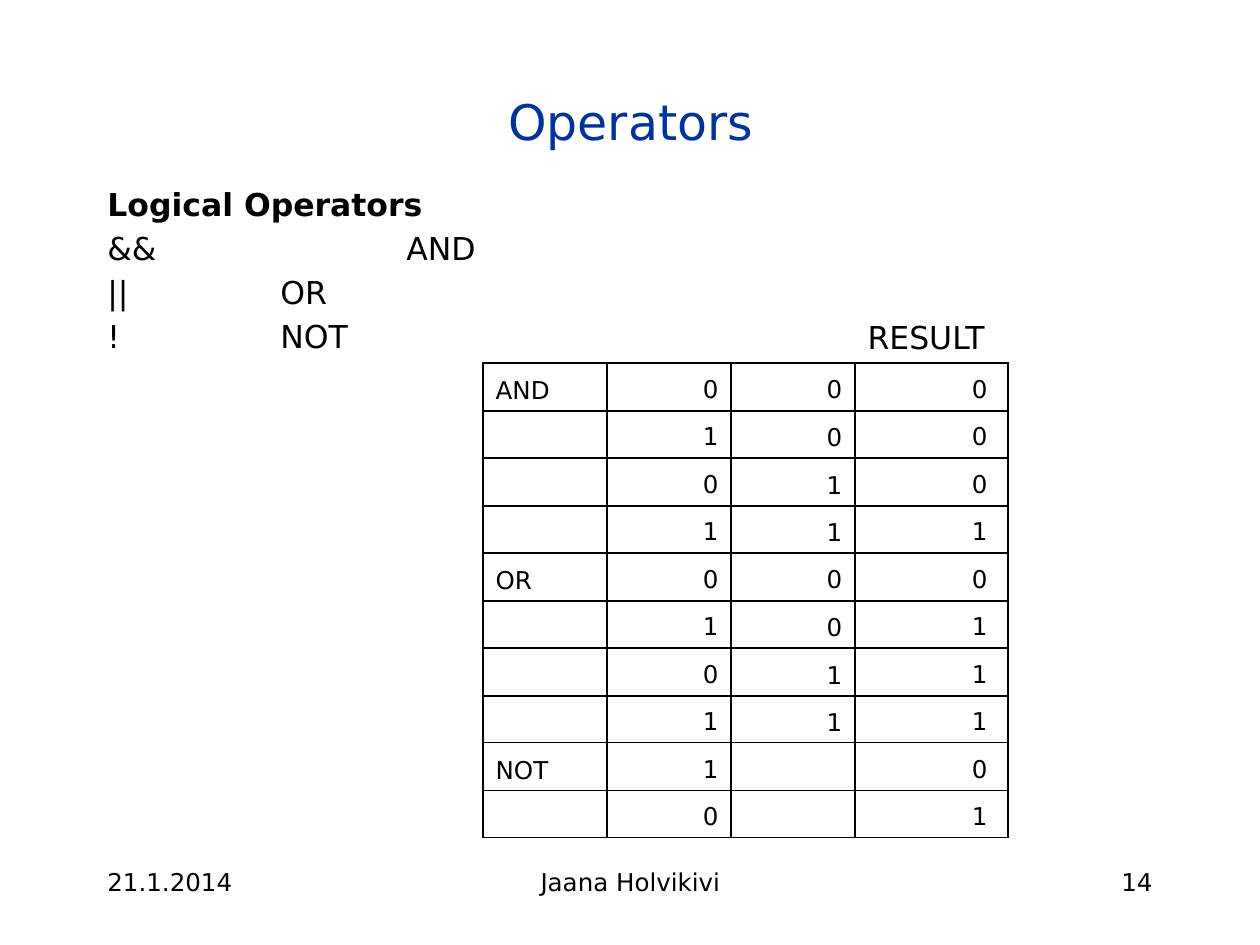
from lxml import etree
from pptx import Presentation
from pptx import util as u
from pptx.dml.color import RGBColor
from pptx.enum import text
from pptx.oxml.ns import qn

SCALE = 914400 / 126
LEFT, CENTER, RIGHT = text.PP_ALIGN.LEFT, text.PP_ALIGN.CENTER, text.PP_ALIGN.RIGHT


def px(n):
    return u.Emu(round(n * SCALE))


def rgb(value):
    return RGBColor.from_string(value)


class Deck:
    font = "DejaVu Sans"
    ink = "000000"
    accent = "003399"

    def __init__(self, width, height):
        self.prs = Presentation()
        self.prs.slide_width, self.prs.slide_height = px(width), px(height)
        self.s = self.prs.slides.add_slide(self.prs.slide_layouts[6])

    def style(self, p, size, align=LEFT, color=ink, bold=False):
        p.alignment = align
        for r in p.runs:
            r.font.name, r.font.size, r.font.bold = self.font, u.Pt(size), bold
            r.font.color.rgb = rgb(color)

    def hang(self, p, spaced):
        pPr = p._p.get_or_add_pPr()
        pPr.set("marL", str(px(47)))
        pPr.set("indent", str(-px(47)))
        pPr.set("defTabSz", str(px(126)))
        if spaced:
            before = etree.SubElement(pPr, qn("a:spcBef"))
            etree.SubElement(before, qn("a:spcPct")).set("val", "20000")

    def box(self, words, x, y, w, h, size=14, align=LEFT, color=ink,
            anchor=text.MSO_ANCHOR.TOP):
        tf = self.s.shapes.add_textbox(px(x), px(y), px(w), px(h)).text_frame
        tf.word_wrap = True
        tf.vertical_anchor = anchor
        tf.text = words
        for p in tf.paragraphs:
            self.style(p, size, align, color)
        return tf

    def body(self, lines, x, y, w, h, size):
        tf = self.box("\n".join(lines), x, y, w, h, size)
        for i, p in enumerate(tf.paragraphs):
            self.style(p, size, bold=i == 0)
            self.hang(p, True)

    def borders(self, cell, sides):
        tcPr = cell._tc.get_or_add_tcPr()
        for side in "LRTB":
            ln = etree.SubElement(tcPr, qn("a:ln" + side), w=str(u.Pt(1)))
            if side in sides:
                fill = etree.SubElement(ln, qn("a:solidFill"))
                etree.SubElement(fill, qn("a:srgbClr"), val=self.ink)
            else:
                etree.SubElement(ln, qn("a:noFill"))

    def cell(self, cell, words, size, align, spaced, sides):
        self.borders(cell, sides)
        cell.fill.background()
        cell.vertical_anchor = text.MSO_ANCHOR.BOTTOM
        if not words:
            cell.margin_top = cell.margin_bottom = 0
            return
        cell.text_frame.text = words
        p = cell.text_frame.paragraphs[0]
        self.style(p, size, align)
        if spaced:
            p.line_spacing = 0.9
        self.hang(p, spaced)

    def truth_table(self, header, rows, x, y, widths, heights):
        table = self.s.shapes.add_table(
            len(rows) + 1, len(widths), px(x), px(y),
            px(sum(widths)), px(sum(heights))).table
        table.first_row = table.horz_banding = False
        for column, w in zip(table.columns, widths):
            column.width = px(w)
        for row, h in zip(table.rows, heights):
            row.height = px(h)
        for c, words in enumerate(header):
            self.cell(table.cell(0, c), words, 18, LEFT, False, "B")
        for r, values in enumerate(rows, 1):
            for c, words in enumerate(values):
                spaced = c == 0 or (c == 2 and not values[0])
                align = RIGHT if c else LEFT
                self.cell(table.cell(r, c), words, 14, align, spaced, "LRTB")


def main():
    deck = Deck(1260, 945)
    deck.box("21.1.2014", 95, 861, 262, 63)
    deck.box("Jaana Holvikivi", 431, 861, 399, 63, align=CENTER)
    deck.box("14", 903, 861, 262, 63, align=RIGHT)
    deck.box("Operators", 95, 42, 1071, 158, 28, CENTER, deck.accent,
             text.MSO_ANCHOR.MIDDLE)
    deck.body(["Logical Operators", "&&\t\tAND", "||\t\tOR", "!\t\tNOT"],
              95, 179, 525, 252, 18)

    pairs = [("0", "0"), ("1", "0"), ("0", "1"), ("1", "1")]
    operators = [("AND", pairs, "0001"), ("OR", pairs, "0111"),
                 ("NOT", [("1", ""), ("0", "")], "01")]
    rows = [("" if i else name, a, b, results[i] + " ")
            for name, inputs, results in operators
            for i, (a, b) in enumerate(inputs)]
    deck.truth_table(("", "", "", "RESULT"), rows, 483, 273,
                     [124, 124, 124, 153], [90] + [48, 47] * 5)
    deck.prs.save("out.pptx")


if __name__ == "__main__":
    main()
